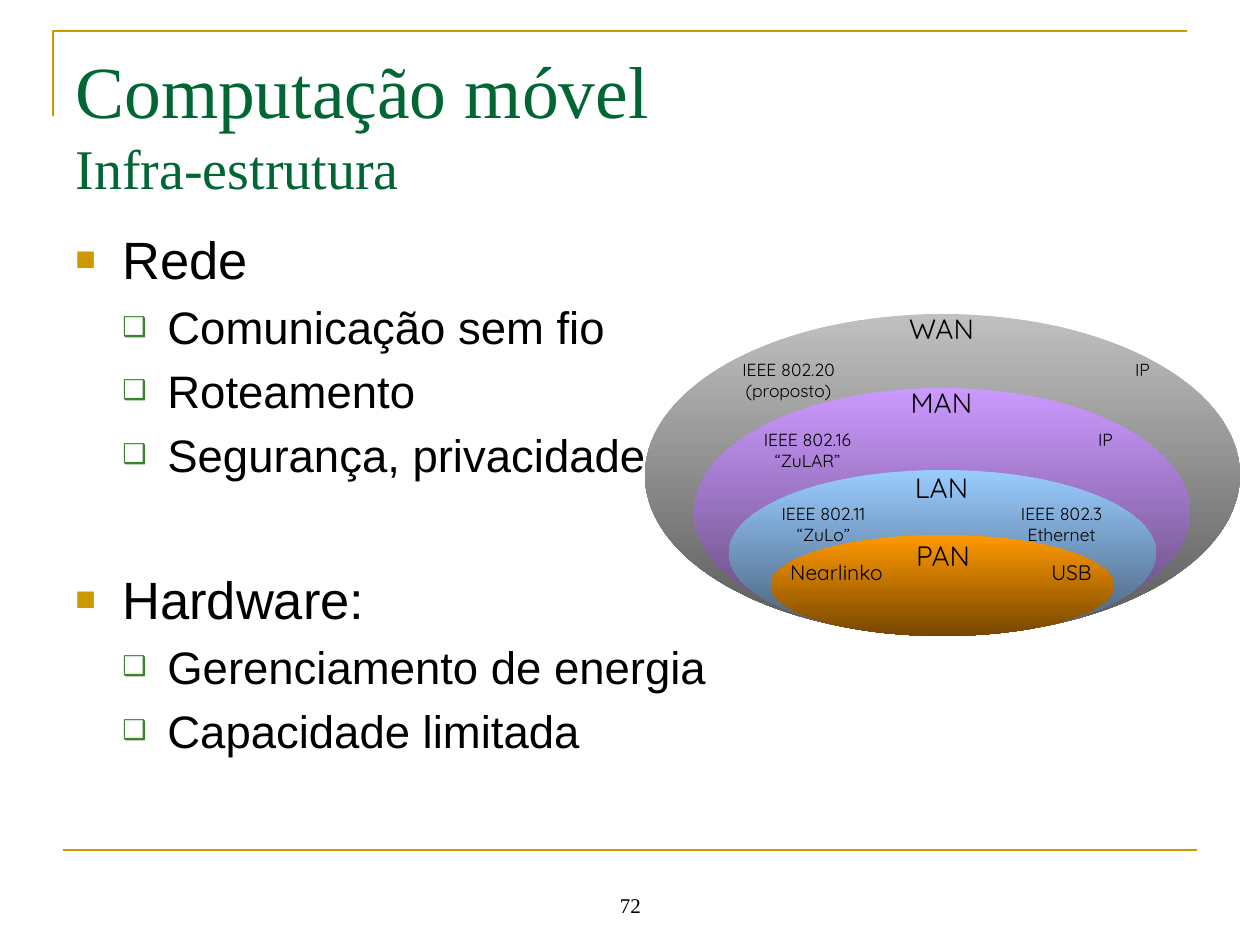
import pptx
import pptx.util
import pptx.dml.color
import pptx.enum.shapes
import pptx.enum.text
import pptx.oxml
import lxml.etree
from pptx.oxml.ns import qn

RGB = pptx.dml.color.RGBColor
GOLD = RGB(0xCC, 0x99, 0x00)
TITLE_GREEN = RGB(0x00, 0x66, 0x33)
BULLET_GREEN = RGB(0x3B, 0x81, 0x2F)
BLACK = RGB(0, 0, 0)
GREY, DARK_GREY = RGB(0xC0, 0xC0, 0xC0), RGB(0x59, 0x59, 0x59)
PURPLE, DARK_PURPLE = RGB(0xCC, 0x99, 0xFF), RGB(0x5E, 0x46, 0x76)
BLUE, DARK_BLUE = RGB(0x99, 0xCC, 0xFF), RGB(0x46, 0x5E, 0x76)
ORANGE, DARK_ORANGE = RGB(0xFF, 0x99, 0x00), RGB(0x76, 0x46, 0x00)
PX = 914400 / 126
CENTER = pptx.enum.text.PP_ALIGN.CENTER


def px(*lengths):
    return [round(length * PX) for length in lengths]


def add_text(shapes, place, lines, size, font, color=BLACK, align=None, wrap=True):
    box = shapes.add_textbox(*px(*place))
    box.text_frame.word_wrap = wrap
    box.text_frame.text = "\n".join(lines)
    for para in box.text_frame.paragraphs:
        para.alignment = align
        para.font.size = pptx.util.Pt(size)
        para.font.name = font
        para.font.color.rgb = color
    return box


deck = pptx.Presentation()
deck.slide_width, deck.slide_height = px(1260, 945)
page = deck.slides.add_slide(deck.slide_layouts[6])

# Gold frame: open corner above, rule below
builder = page.shapes.build_freeform(*px(53, 116), scale=1.0)
builder.add_line_segments([px(53, 31), px(1187, 31)], close=False)
corner = builder.convert_to_shape()
corner.shadow.inherit = False
corner.fill.background()
rule = page.shapes.add_connector(
    pptx.enum.shapes.MSO_CONNECTOR.STRAIGHT, *px(63, 850, 1197, 850))
lxml.etree.SubElement(rule._element.spPr, qn("a:effectLst"))
for edge in (corner, rule):
    edge.line.color.rgb = GOLD
    edge.line.width = pptx.util.Pt(1.5)

# Page number
number = add_text(page.shapes, (431, 861, 399, 63), ["72"], 12, "Times New Roman", align=CENTER)
number.text_frame.vertical_anchor = pptx.enum.text.MSO_ANCHOR.BOTTOM

# Title and subtitle
title = add_text(page.shapes, (63, 38, 1134, 157), ["Computação móvel"], 42,
                 "Times New Roman", TITLE_GREEN)
title.text_frame.margin_top = px(7)[0]
para = title.text_frame.paragraphs[0]
para.add_line_break()
span = para.add_run()
span.text = "Infra-estrutura"
span.font.size = pptx.util.Pt(32)

# Bulleted topics: level, text, space before
topics = [
    (0, "Rede", 6.4),
    (1, "Comunicação sem fio", 5.2),
    (1, "Roteamento", 5.2),
    (1, "Segurança, privacidade, ...", 5.2),
    (0, "Hardware:", 49),
    (1, "Gerenciamento de energia", 5.2),
    (1, "Capacidade limitada", 5.2),
]
# Per level: text size, left margin, hanging indent, bullet, colour, bullet percent
levels = [(30, 47, 47, "■", GOLD, 65), (26, 92, 45, "❑", BULLET_GREEN, 60)]
body = add_text(page.shapes, (63, 221, 1134, 624), [text for _, text, _ in topics], 30, "Arial")
for para, (level, _, space) in zip(body.text_frame.paragraphs, topics):
    size, margin, hanging, bullet, color, percent = levels[level]
    para.level = level
    para.font.size = pptx.util.Pt(size)
    para.space_before = pptx.util.Pt(space)
    props = para._p.get_or_add_pPr()
    props.set("marL", str(px(margin)[0]))
    props.set("indent", str(-px(hanging)[0]))
    marks = pptx.oxml.parse_xml(
        '<a:pPr xmlns:a="http://schemas.openxmlformats.org/drawingml/2006/main">'
        f'<a:buClr><a:srgbClr val="{color}"/></a:buClr><a:buSzPct val="{percent * 1000}"/>'
        f'<a:buFont typeface="Arial"/><a:buChar char="{bullet}"/></a:pPr>')
    for mark in list(marks):
        props.find(qn("a:defRPr")).addprevious(mark)

# Nested network ranges
diagram = page.shapes.add_group_shape().shapes
ranges = [
    ((645, 314, 595, 322), GREY, DARK_GREY),
    ((694, 388, 496, 248), PURPLE, DARK_PURPLE),
    ((729, 470, 427, 166), BLUE, DARK_BLUE),
    ((771, 535, 343, 101), ORANGE, DARK_ORANGE),
]
for place, top_color, bottom_color in ranges:
    ellipse = diagram.add_shape(pptx.enum.shapes.MSO_SHAPE.OVAL, *px(*place))
    ellipse.shadow.inherit = False
    ellipse.line.fill.background()
    ellipse.fill.gradient()
    ellipse.fill.gradient_angle = 270
    for stop, color, position in zip(ellipse.fill.gradient_stops, (top_color, bottom_color), (0, 1)):
        stop.color.rgb = color
        stop.position = position

# Range names and technologies
labels = [
    ((900, 532, 86, 47), 16, ["PAN"]),
    ((900, 464, 83, 47), 16, ["LAN"]),
    ((896, 379, 91, 47), 16, ["MAN"]),
    ((895, 305, 93, 47), 16, ["WAN"]),
    ((774, 553, 125, 38), 12, ["Nearlinko"]),
    ((1036, 553, 71, 38), 12, ["USB"]),
    ((759, 497, 129, 54), 10, ["IEEE 802.11", "“ZuLo”"]),
    ((1003, 497, 117, 54), 10, ["IEEE 802.3", "Ethernet"]),
    ((743, 423, 129, 54), 10, ["IEEE 802.16", "“ZuLAR”"]),
    ((1084, 423, 43, 34), 10, ["IP"]),
    ((724, 353, 129, 54), 10, ["IEEE 802.20", "(proposto)"]),
    ((1121, 353, 43, 34), 10, ["IP"]),
]
for place, size, lines in labels:
    add_text(diagram, place, lines, size, "Quicksand", align=CENTER, wrap=False)

deck.save("out.pptx")
